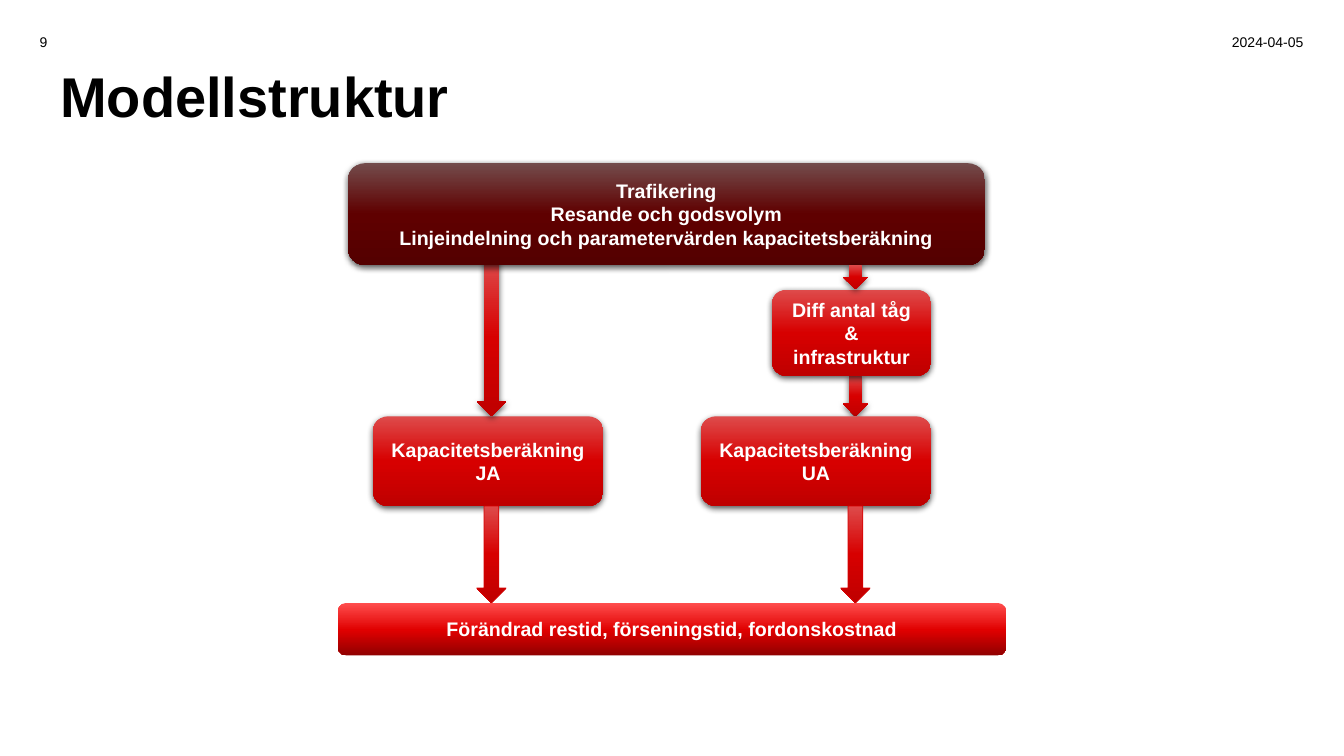
"""Build the Modellstruktur flow chart slide."""
import lxml.etree
import pptx
import pptx.dml.color
import pptx.enum.shapes
import pptx.enum.text
import pptx.oxml.ns
import pptx.util

Pt = pptx.util.Pt
ALIGN = pptx.enum.text.PP_ALIGN
SHAPE = pptx.enum.shapes.MSO_SHAPE
qn = pptx.oxml.ns.qn

COLORS = {"black": "000000", "white": "FFFFFF", "red": "D70000"}
GRADIENTS = {
    "red": [(0, "DE4B4B"), (50, "D70000"), (100, "BF0000")],
    "dark": [(0, "734B4B"), (50, "5F0000"), (100, "540000")],
    "bright": [(0, "FF4E4E"), (52, "E00000"), (100, "900000")],
}


def write_text(frame, text, size=14, color="white", bold=True, align=ALIGN.CENTER):
    """Write each line of text as a formatted paragraph."""
    frame.word_wrap = True
    frame.vertical_anchor = pptx.enum.text.MSO_ANCHOR.MIDDLE
    for index, line in enumerate(text.split("\n")):
        paragraph = frame.add_paragraph() if index else frame.paragraphs[0]
        paragraph.alignment = align
        run = paragraph.add_run()
        run.text = line
        run.font.name = "Arial"
        run.font.size = Pt(size)
        run.font.bold = bold
        run.font.color.rgb = pptx.dml.color.RGBColor.from_string(COLORS[color])


class FlowSlide:
    """Hold the current slide and draw its elements in one style."""

    def __init__(self, slide):
        """Keep the slide to draw on."""
        self.slide = slide

    def label(self, text, left, top, width, height, **text_format):
        """Add a plain text box."""
        box = self.slide.shapes.add_textbox(Pt(left), Pt(top), Pt(width), Pt(height))
        write_text(box.text_frame, text, color="black", **text_format)

    def shape(self, kind, left, top, width, height, gradient="red", shadow=True):
        """Add a preset shape with a vertical gradient."""
        shape = self.slide.shapes.add_shape(kind, Pt(left), Pt(top), Pt(width), Pt(height))
        shape.fill.gradient()
        shape.fill.gradient_angle = 270
        stops = shape._element.spPr.find(".//" + qn("a:gsLst"))
        for stop in list(stops):
            stops.remove(stop)
        for position, color in GRADIENTS[gradient]:
            stop = lxml.etree.SubElement(stops, qn("a:gs"), pos=str(position * 1000))
            lxml.etree.SubElement(stop, qn("a:srgbClr"), val=color)
        shape.line.fill.background()
        shape.shadow.inherit = False
        if shadow:
            effects = shape._element.spPr.find(qn("a:effectLst"))
            outer = lxml.etree.SubElement(
                effects, qn("a:outerShdw"), blurRad=str(Pt(4.5)), dist=str(Pt(1.5)),
                dir="5400000", rotWithShape="0")
            black = lxml.etree.SubElement(outer, qn("a:srgbClr"), val=COLORS["black"])
            lxml.etree.SubElement(black, qn("a:alpha"), val="63000")
        return shape

    def box(self, text, left, top, width, height, **style):
        """Add a rounded box with centred text."""
        shape = self.shape(SHAPE.ROUNDED_RECTANGLE, left, top, width, height, **style)
        write_text(shape.text_frame, text)

    def arrow(self, center, top, bottom, width=21, outlined=False):
        """Add a down arrow around a vertical centre line."""
        shape = self.shape(SHAPE.DOWN_ARROW, center - width / 2, top, width,
                           bottom - top, shadow=not outlined)
        if outlined:
            shape.line.color.rgb = pptx.dml.color.RGBColor.from_string(COLORS["red"])
            shape.line.width = Pt(0.5)


def main():
    """Create the presentation and save it."""
    presentation = pptx.Presentation()
    presentation.slide_width = Pt(960)
    presentation.slide_height = Pt(540)
    flow = FlowSlide(presentation.slides.add_slide(presentation.slide_layouts[6]))

    flow.label("Modellstruktur", 36, 44, 315, 48, size=40, align=ALIGN.LEFT)
    flow.label("2024-04-05", 799, 16, 139, 28.5, size=10, bold=False, align=ALIGN.RIGHT)
    flow.label("9", 0, 16, 62, 28.5, size=10, bold=False)

    ja_axis, ua_axis = 351, 611
    calculation_top, calculation_height = 297.4, 64
    calculation_bottom = calculation_top + calculation_height
    result_top = 430.6

    flow.box("Kapacitetsberäkning\nJA", 266.4, calculation_top, 164.5, calculation_height)
    flow.arrow(ua_axis, 268.4, calculation_top, width=18)
    flow.arrow(ja_axis, 185, calculation_top)
    flow.box("Kapacitetsberäkning\nUA", 500.6, calculation_top, 164.5, calculation_height)
    flow.box("Trafikering\nResande och godsvolym\n"
             "Linjeindelning och parametervärden kapacitetsberäkning",
             248.5, 116.6, 455, 72.8, gradient="dark")
    flow.box("Diff antal tåg & infrastruktur", 551.4, 207, 113.7, 61.4)
    flow.arrow(ua_axis, 189.4, 206.4, width=18)
    flow.box("Förändrad restid, förseningstid, fordonskostnad",
             241.3, result_top, 477.4, 37.6, gradient="bright", shadow=False)
    for axis in (ja_axis, ua_axis):
        flow.arrow(axis, calculation_bottom, result_top, outlined=True)

    presentation.save("out.pptx")


if __name__ == "__main__":
    main()
